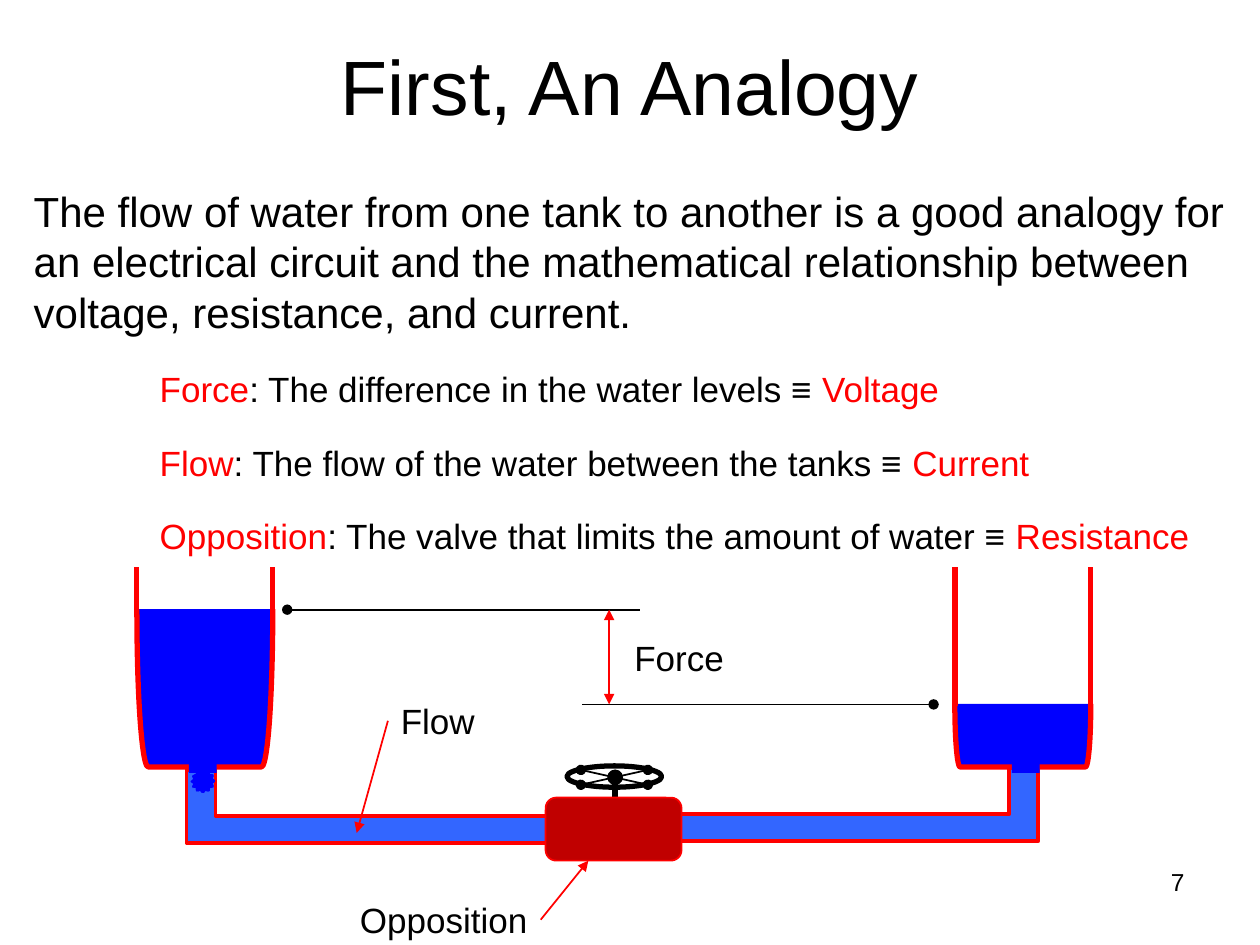
from typing import NamedTuple, Optional

from lxml.etree import SubElement
from pptx import Presentation
from pptx.dml.color import RGBColor
from pptx.enum.shapes import MSO_CONNECTOR, MSO_SHAPE
from pptx.enum.text import MSO_ANCHOR, MSO_AUTO_SIZE, PP_ALIGN
from pptx.oxml.ns import qn
from pptx.util import Cm, Pt

BLACK, RED, WATER, PIPE, VALVE = "000000", "FF0000", "0000FF", "3366FF", "C00000"
FONT = "Arial"


class Tank(NamedTuple):
    center: float
    water_top: float
    outlet_left: float


class Term(NamedTuple):
    name: str
    meaning: str
    equivalent: str


class Line(NamedTuple):
    start: tuple[float, float]
    end: tuple[float, float]
    color: str = BLACK
    width: float = 1
    head: Optional[str] = None
    tail: Optional[str] = None


class Label(NamedTuple):
    text: str
    frame: tuple[float, float, float, float]


TANK_RIM, TANK_BOTTOM, TANK_WIDTH = 11.43, 15.46, 2.74
LEFT_TANK = Tank(4.13, 12.28, 3.81)
RIGHT_TANK = Tank(20.62, 14.19, 20.4)

INTRO = ("The flow of water from one tank to another is a good analogy for an "
         "electrical circuit and the mathematical relationship between voltage, "
         "resistance, and current.")
TERMS = [
    Term("Force", "The difference in the water levels", "Voltage"),
    Term("Flow", "The flow of the water between the tanks", "Current"),
    Term("Opposition", "The valve that limits the amount of water", "Resistance"),
]

LEVEL_LINES = [
    Line((12.9, 12.29), (5.79, 12.29), tail="oval"),
    Line((18.82, 14.2), (11.73, 14.2), head="oval"),
    Line((12.28, 14.2), (12.28, 12.29), RED, head="triangle", tail="triangle"),
]
HANDWHEEL_LINES = [
    Line((11.71, 15.82), (13.06, 15.52), head="oval", tail="oval"),
    Line((11.71, 15.52), (13.06, 15.82), head="oval", tail="oval"),
    Line((12.4, 16.31), (12.4, 15.67), width=3, head="oval", tail="oval"),
]
FORCE_LABEL = Label("Force ", (12.52, 12.7, 2.54, 1.12))
FLOW_LABEL = Label("Flow ", (7.82, 13.97, 2.21, 1.12))
OPPOSITION_LABEL = Label("Opposition", (6.99, 17.98, 3.91, 1.12))


def rgb(color: str) -> RGBColor:
    return RGBColor.from_string(color)


def add_span(para, text: str, size: float, color: str = BLACK) -> None:
    span = para.add_run()
    span.text = text
    span.font.name = FONT
    span.font.size = Pt(size)
    span.font.color.rgb = rgb(color)


def add_box(page, frame: tuple, wrap: bool = True):
    box = page.shapes.add_textbox(*map(Cm, frame))
    box.text_frame.word_wrap = wrap
    return box


def add_label(page, label: Label):
    box = add_box(page, label.frame, wrap=False)
    box.text_frame.auto_size = MSO_AUTO_SIZE.SHAPE_TO_FIT_TEXT
    para = box.text_frame.paragraphs[0]
    para.alignment = PP_ALIGN.CENTER
    add_span(para, label.text, 20)
    return box


def add_line(shapes, line: Line):
    connector = shapes.add_connector(
        MSO_CONNECTOR.STRAIGHT, *map(Cm, line.start + line.end))
    connector.line.color.rgb = rgb(line.color)
    connector.line.width = Pt(line.width)
    properties = connector.element.spPr
    outline = properties.find(qn("a:ln"))
    for tag, kind in (("a:headEnd", line.head), ("a:tailEnd", line.tail)):
        if kind:
            SubElement(outline, qn(tag), type=kind)
    SubElement(properties, qn("a:effectLst"))
    return connector


def add_figure(shapes, preset, frame: tuple, fill: Optional[str] = None,
               line: Optional[str] = None, width: float = 1):
    figure = shapes.add_shape(preset, *map(Cm, frame))
    figure.shadow.inherit = False
    if fill:
        figure.fill.solid()
        figure.fill.fore_color.rgb = rgb(fill)
    else:
        figure.fill.background()
    if line:
        figure.line.color.rgb = rgb(line)
        figure.line.width = Pt(width)
    else:
        figure.line.fill.background()
    return figure


def add_pipe(page, left: float, top: float, mirrored: bool = False) -> None:
    """Draw an L-shaped pipe; its preset has no member in MSO_SHAPE."""
    pipe = add_figure(page.shapes, MSO_SHAPE.RECTANGLE, (left, top, 7.87, 1.47),
                      PIPE, RED, 2.25)
    properties = pipe.element.spPr
    geometry = properties.find(qn("a:prstGeom"))
    geometry.set("prst", "corner")
    guides = geometry.find(qn("a:avLst"))
    for name, value in (("adj1", 37200), ("adj2", 39800)):
        SubElement(guides, qn("a:gd"), name=name, fmla=f"val {value}")
    if mirrored:
        properties.find(qn("a:xfrm")).set("flipH", "1")


def add_tank(page, tank: Tank) -> None:
    """Draw the water as a bracket turned to open upward, then walls and outlet."""
    shapes = page.shapes.add_group_shape().shapes
    depth = TANK_BOTTOM - tank.water_top
    middle = (tank.water_top + TANK_BOTTOM) / 2
    water = add_figure(
        shapes, MSO_SHAPE.LEFT_BRACKET,
        (tank.center - depth / 2, middle - TANK_WIDTH / 2, depth, TANK_WIDTH),
        WATER, RED, 3)
    water.rotation = 270
    for side in (1, -1):
        x = tank.center + side * TANK_WIDTH / 2
        add_line(shapes, Line((x, tank.water_top + 0.05), (x, TANK_RIM), RED, 3))
    add_figure(shapes, MSO_SHAPE.RECTANGLE, (tank.outlet_left, 14.94, 0.56, 0.64), WATER)


def add_title(page) -> None:
    title = page.shapes.title
    title.left, title.top, title.width, title.height = map(Cm, (0, 0, 25.4, 3.4))
    title.text_frame.vertical_anchor = MSO_ANCHOR.MIDDLE
    para = title.text_frame.paragraphs[0]
    para.alignment = PP_ALIGN.CENTER
    add_span(para, "First, An Analogy", 44)


def add_explanation(page) -> None:
    frame = add_box(page, (0.43, 3.61, 24.56, 8.94)).text_frame
    intro = frame.paragraphs[0]
    intro.space_after = Pt(12)
    add_span(intro, INTRO, 24)
    for term in TERMS:
        para = frame.add_paragraph()
        para.space_before, para.space_after = Pt(6), Pt(12)
        para._p.get_or_add_pPr().set("marL", str(Cm(2.54)))
        add_span(para, term.name, 20, RED)
        add_span(para, f": {term.meaning} ≡ ", 20)
        add_span(para, term.equivalent, 20, RED)


def add_page_number(page) -> None:
    para = add_box(page, (18.21, 17.35, 5.92, 1.32)).text_frame.paragraphs[0]
    para.alignment = PP_ALIGN.RIGHT
    add_span(para, "7", 14)


def main() -> None:
    deck = Presentation()
    deck.slide_width, deck.slide_height = Cm(25.4), Cm(19.05)
    page = deck.slides.add_slide(deck.slide_layouts[5])
    add_title(page)
    add_page_number(page)
    for line in LEVEL_LINES:
        add_line(page.shapes, line)
    add_label(page, FORCE_LABEL)
    add_explanation(page)
    add_pipe(page, 3.76, 15.52)
    for left, top in ((3.86, 15.54), (3.89, 15.52), (3.89, 15.54)):
        add_figure(page.shapes, MSO_SHAPE.STAR_12_POINT, (left, top, 0.43, 0.43), WATER, WATER)
    add_tank(page, LEFT_TANK)
    add_pipe(page, 13.06, 15.49, mirrored=True)
    add_tank(page, RIGHT_TANK)
    flow = add_label(page, FLOW_LABEL)
    flow_arrow = add_line(page.shapes, Line((7.82, 14.53), (7.19, 16.79), RED, tail="triangle"))
    flow_arrow.begin_connect(flow, 1)
    add_figure(page.shapes, MSO_SHAPE.OVAL, (11.43, 15.44, 1.91, 0.43), line=BLACK, width=3)
    for line in HANDWHEEL_LINES:
        add_line(page.shapes, line)
    add_figure(page.shapes, MSO_SHAPE.ROUNDED_RECTANGLE, (11, 16.08, 2.74, 1.27), VALVE, RED)
    opposition = add_label(page, OPPOSITION_LABEL)
    valve_arrow = add_line(page.shapes, Line((10.9, 18.54), (11.86, 17.35), RED, tail="triangle"))
    valve_arrow.begin_connect(opposition, 3)
    deck.save("out.pptx")


if __name__ == "__main__":
    main()
